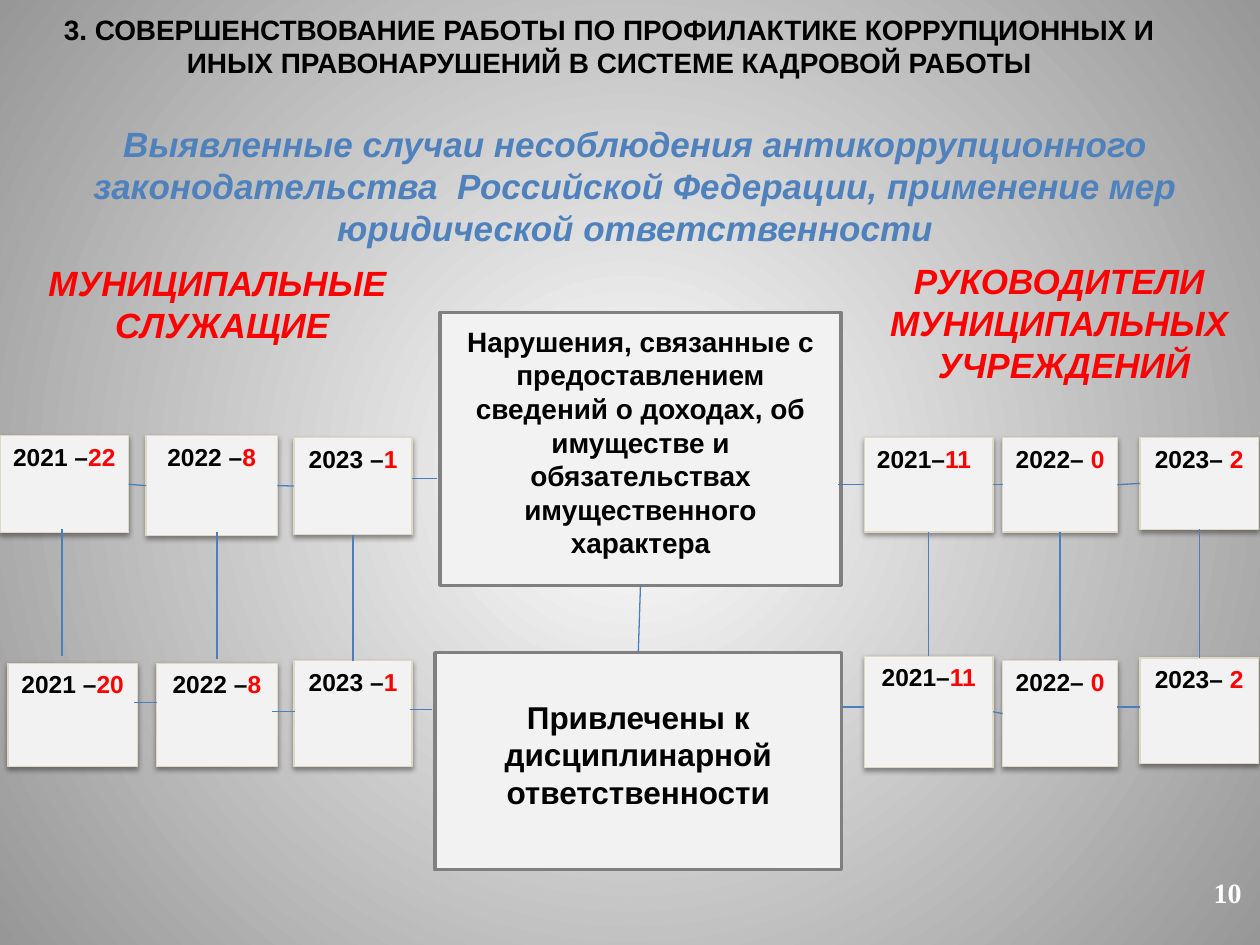
from lxml import etree
from pptx import Presentation
from pptx.dml.color import RGBColor
from pptx.enum.shapes import MSO_CONNECTOR as Connector, MSO_SHAPE as Shape
from pptx.enum.text import MSO_ANCHOR as Anchor, MSO_AUTO_SIZE as AutoSize, PP_ALIGN as Align
from pptx.oxml import parse_xml
from pptx.oxml.ns import nsdecls, qn
from pptx.util import Pt

BLACK = RGBColor(0x00, 0x00, 0x00)
WHITE = RGBColor(0xFF, 0xFF, 0xFF)
RED = RGBColor(0xFF, 0x00, 0x00)
BLUE = RGBColor(0x4F, 0x81, 0xBD)
LINK_BLUE = RGBColor(0x4B, 0x7E, 0xBC)
PANEL = RGBColor(0xF2, 0xF2, 0xF2)
GREY = RGBColor(0x80, 0x80, 0x80)
SAND = RGBColor(0xDD, 0xD9, 0xC3)
EDGE = RGBColor(0x97, 0x97, 0x97)

TOP, LEFT, BOTTOM, RIGHT = range(4)

LEFT_TOP = [
    ((0, 0, 73.5, 55.5), "2021 –", "22", Align.CENTER),
    ((83.5, 0, 75, 57), "2022 –", "8", Align.CENTER),
    ((168, 1, 67.5, 55.5), "2023 –", "1", Align.CENTER),
]
LEFT_BOTTOM = [
    ((4.5, 1.5, 74, 59), "2021 –", "20", Align.CENTER),
    ((89.5, 1.5, 69, 59), "2022 –", "8", Align.CENTER),
    ((168, 0, 67.5, 60.5), "2023 –", "1", Align.CENTER),
]
RIGHT_TOP = [
    ((0, 0, 73.5, 54), "2021–", "11", Align.LEFT),
    ((79, 0, 65.5, 54), "2022– ", "0", Align.CENTER),
    ((157.5, 0, 67.5, 52.5), "2023– ", "2", Align.CENTER),
]
RIGHT_BOTTOM = [
    ((0, 0, 73.5, 63.5), "2021–", "11", Align.CENTER),
    ((79, 2.5, 65.5, 60.5), "2022– ", "0", Align.CENTER),
    ((157.5, 1, 67.5, 60.5), "2023– ", "2", Align.CENTER),
]


def paint_background(page):
    """Fill the page with a round gradient, white in the middle."""
    fill = page.background.fill
    fill.gradient()
    for stop, color, position in zip(fill.gradient_stops, (WHITE, EDGE), (0, 1)):
        stop.color.rgb = color
        stop.position = position
    gradient = page.background._cSld.find(".//" + qn("a:gradFill"))
    gradient.remove(gradient.find(qn("a:lin")))
    gradient.append(parse_xml(
        f'<a:path {nsdecls("a")} path="circle">'
        '<a:fillToRect l="50000" t="50000" r="50000" b="50000"/></a:path>'))


def add_span(para, text, size, color, italic=False, font="Arial"):
    """Add one bold run to a paragraph."""
    span = para.add_run()
    span.text = text
    span.font.name = font
    span.font.size = Pt(size)
    span.font.bold = True
    span.font.italic = italic
    span.font.color.rgb = color


def place_label(page, box, lines, size, color, italic=False, font="Arial"):
    """Place a centred text box with one paragraph per line."""
    frame = page.shapes.add_textbox(*map(Pt, box)).text_frame
    frame.word_wrap = True
    frame.auto_size = AutoSize.SHAPE_TO_FIT_TEXT
    for index, line in enumerate(lines):
        para = frame.add_paragraph() if index else frame.paragraphs[0]
        para.alignment = Align.CENTER
        add_span(para, line, size, color, italic, font)


def place_panel(page, box, border, width):
    """Place a pale rectangle without a shadow."""
    panel = page.shapes.add_shape(Shape.RECTANGLE, *map(Pt, box))
    panel.shadow.inherit = False
    panel.fill.solid()
    panel.fill.fore_color.rgb = PANEL
    panel.line.color.rgb = border
    panel.line.width = Pt(width)
    panel.text_frame.word_wrap = True
    return panel


def place_topic(page, box, text, size):
    """Place a central panel whose text sits slightly above the middle."""
    panel = place_panel(page, box, GREY, 2)
    frame = panel.text_frame
    frame.vertical_anchor = Anchor.MIDDLE
    frame.margin_top, frame.margin_bottom = Pt(4), Pt(12)
    para = frame.paragraphs[0]
    para.alignment = Align.CENTER
    add_span(para, text, size, BLACK)
    return panel


def place_cells(page, box, cells):
    """Place a row of shadowed year cells and return them."""
    placed = []
    for (left, top, width, height), year, count, align in cells:
        cell = place_panel(page, (box[0] + left, box[1] + top, width, height), SAND, 0.75)
        effects = cell._element.spPr.find(qn("a:effectLst"))
        shadow = etree.SubElement(effects, qn("a:outerShdw"), blurRad=str(Pt(3.1)),
                                  dist=str(Pt(1.6)), dir="5400000", rotWithShape="0")
        color = etree.SubElement(shadow, qn("a:srgbClr"), val="000000")
        etree.SubElement(color, qn("a:alpha"), val="38000")
        cell.text_frame.vertical_anchor = Anchor.TOP
        para = cell.text_frame.paragraphs[0]
        para.alignment = align
        add_span(para, year, 14, BLACK)
        add_span(para, count, 14, RED)
        placed.append(cell)
    return placed


def place_line(page, start=(0, 0), end=(0, 0)):
    """Draw a thin line between two points."""
    line = page.shapes.add_connector(Connector.STRAIGHT, *map(Pt, (*start, *end)))
    line.line.color.rgb = LINK_BLUE
    line.line.width = Pt(0.75)
    etree.SubElement(line._element.spPr, qn("a:effectLst"))
    return line


def join(page, first, first_side, second, second_side):
    """Join the side middles of two panels."""
    line = place_line(page)
    line.begin_connect(first, first_side)
    line.end_connect(second, second_side)


def place_scheme(page, box):
    """Place both topics, the four rows of cells and the lines between them."""
    left, top, width, height = box
    violations = place_topic(
        page, (left + 251.5, top, 229, 156),
        "Нарушения, связанные с предоставлением сведений о доходах, об имуществе "
        "и обязательствах имущественного характера", 16)
    penalties = place_topic(page, (left + 248.5, top + 194.5, 232.5, 124),
                            "Привлечены к дисциплинарной ответственности", 18)
    left_top = place_cells(page, (left, top + 70.5), LEFT_TOP)
    left_bottom = place_cells(page, (left, top + 199), LEFT_BOTTOM)
    right_top = place_cells(page, (left + 494, top + 71.5), RIGHT_TOP)
    right_bottom = place_cells(page, (left + 494, top + 196.5), RIGHT_BOTTOM)

    join(page, violations, BOTTOM, penalties, TOP)
    for row in (left_top, right_top, right_bottom[:2]):
        for first, second in zip(row, row[1:]):
            join(page, first, RIGHT, second, LEFT)
    for upper, lower in zip(left_top[2:] + right_top, left_bottom[2:] + right_bottom):
        join(page, upper, BOTTOM, lower, TOP)
    for x, y, run, drop in (
        (35.5, 124, 0, 72.5), (124, 125.5, 0, 72.5),
        (235.5, 95, 14.5, 0), (479, 98.5, 15, 0),
        (76.5, 223, 13, 0), (155.5, 228, 13, 0), (234, 227, 13, 0),
        (481, 225.5, 13, 0), (638.5, 225.5, 13, 0),
    ):
        place_line(page, (left + x, top + y), (left + x + run, top + y + drop))


def main():
    """Build the deck with its single page."""
    deck = Presentation()
    deck.slide_width, deck.slide_height = Pt(720), Pt(540)
    page = deck.slides.add_slide(deck.slide_layouts[6])
    paint_background(page)
    place_label(page, (683, 497, 37, 26.5), ["10"], 16, WHITE, font="Times New Roman")
    place_label(page, (25, 3.5, 646.5, 46),
                ["3. СОВЕРШЕНСТВОВАНИЕ РАБОТЫ ПО ПРОФИЛАКТИКЕ КОРРУПЦИОННЫХ И "
                 "ИНЫХ ПРАВОНАРУШЕНИЙ В СИСТЕМЕ КАДРОВОЙ РАБОТЫ"], 16, BLACK)
    place_label(page, (25, 66.5, 676, 80),
                ["Выявленные случаи несоблюдения антикоррупционного законодательства  "
                 "Российской Федерации, применение мер юридической ответственности"],
                20, BLUE, italic=True)
    place_label(page, (19.5, 146, 209.5, 55.5), ["МУНИЦИПАЛЬНЫЕ", " СЛУЖАЩИЕ"],
                20, RED, italic=True)
    place_label(page, (499, 145, 212.5, 80), ["РУКОВОДИТЕЛИ МУНИЦИПАЛЬНЫХ", " УЧРЕЖДЕНИЙ"],
                20, RED, italic=True)
    place_scheme(page, (0, 178.5, 720, 318.5))
    deck.save("out.pptx")


if __name__ == "__main__":
    main()
